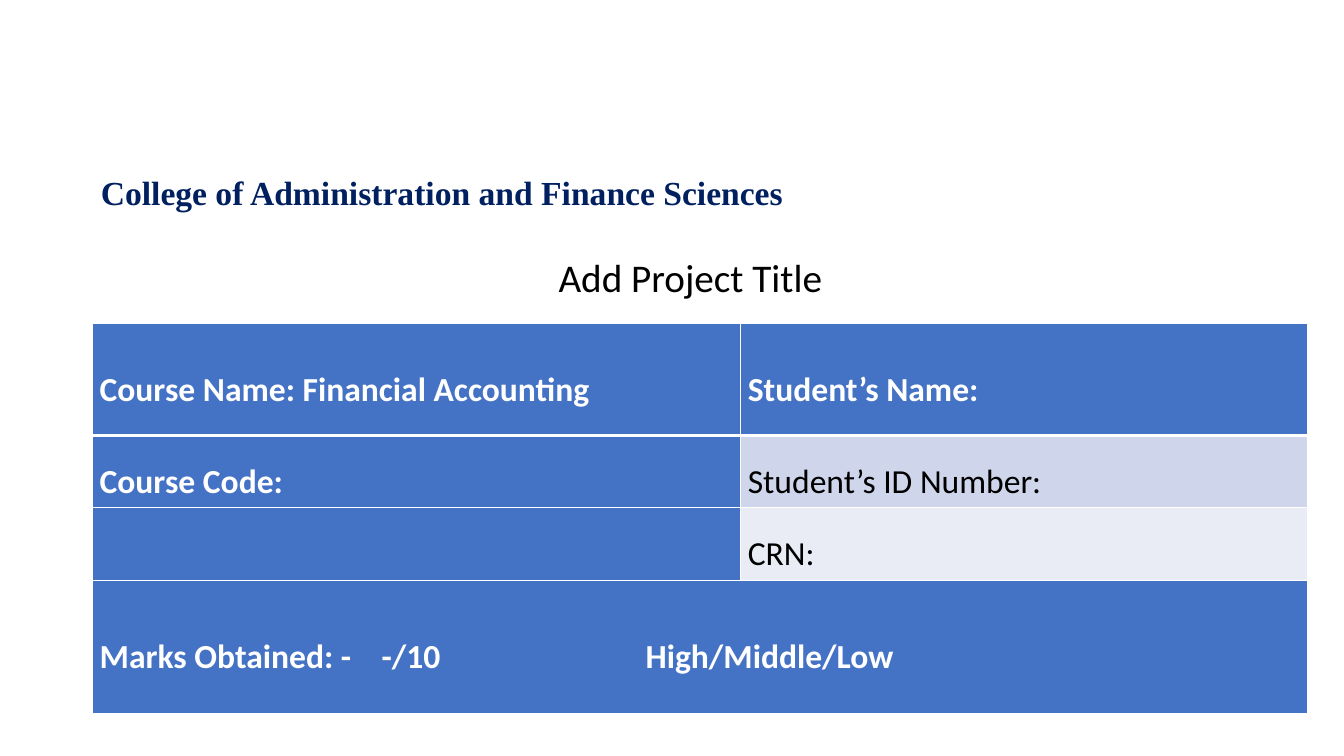
from lxml.etree import SubElement
from pptx import Presentation
from pptx.dml.color import RGBColor
from pptx.enum.text import MSO_ANCHOR, PP_ALIGN
from pptx.oxml import parse_xml
from pptx.oxml.ns import nsdecls, qn
from pptx.util import Pt

BLACK = RGBColor(0x00, 0x00, 0x00)
WHITE = RGBColor(0xFF, 0xFF, 0xFF)
NAVY = RGBColor(0x00, 0x20, 0x60)
BLUE = RGBColor(0x44, 0x72, 0xC4)
PALE_BLUE = RGBColor(0xCF, 0xD5, 0xEA)
LIGHT_GREY = RGBColor(0xE9, 0xEB, 0xF5)

HEADING = (WHITE, BLUE, True)
DETAIL = (BLACK, PALE_BLUE, False)
DETAIL_ALTERNATE = (BLACK, LIGHT_GREY, False)

COLUMN_WIDTHS = (463, 404.6)
ROW_HEIGHTS = (79.9, 51.8, 51.8, 95)
MARK_STOPS = (201.4, 390)
ROWS = (
    (("Course Name: Financial Accounting", HEADING), ("Student’s Name:", HEADING)),
    (("Course Code:", HEADING), ("Student’s ID Number:", DETAIL)),
    (("", HEADING), ("CRN:", DETAIL_ALTERNATE)),
    (("Marks Obtained: -\t-/10\tHigh/Middle/Low", HEADING), ("", HEADING)),
)


class CoverSlide:
    def __init__(self, deck):
        self.slide = deck.slides.add_slide(deck.slide_layouts[6])
        self.font = "Calibri"
        self.size = 24

    def fill_paragraph(self, para, text, font_format, para_format):
        for name, value in para_format.items():
            setattr(para, name, value)
        span = para.add_run()
        span.text = text
        span.font.color.rgb = font_format["color"]
        values = {
            "name": font_format.get("name", self.font),
            "size": Pt(font_format.get("size", self.size)),
            "bold": font_format.get("bold", False),
        }
        for name, value in values.items():
            setattr(span.font, name, value)

    def text(self, text, left, top, width, height, font_format, para_format):
        box = self.slide.shapes.add_textbox(Pt(left), Pt(top), Pt(width), Pt(height))
        box.text_frame.word_wrap = True
        self.fill_paragraph(box.text_frame.paragraphs[0], text, font_format, para_format)

    def tab_stops(self, para, positions):
        stops = SubElement(para._p.get_or_add_pPr(), qn("a:tabLst"))
        for position in positions:
            SubElement(stops, qn("a:tab"), pos=str(Pt(position)), algn="l")

    def borders(self, cell, top, bottom):
        properties = cell._tc.get_or_add_tcPr()
        widths = {"lnL": 1, "lnR": 1, "lnT": top, "lnB": bottom}
        for index, (edge, width) in enumerate(widths.items()):
            line = parse_xml(
                f'<a:{edge} {nsdecls("a")} w="{Pt(width)}"><a:solidFill>'
                f'<a:srgbClr val="{WHITE}"/></a:solidFill></a:{edge}>'
            )
            properties.insert(index, line)

    def cell(self, cell, text, style):
        color, fill, bold = style
        margins = {
            "margin_left": Pt(5),
            "margin_right": Pt(5),
            "margin_top": 0,
            "margin_bottom": 0,
            "vertical_anchor": MSO_ANCHOR.MIDDLE,
        }
        for name, value in margins.items():
            setattr(cell, name, value)
        cell.fill.solid()
        cell.fill.fore_color.rgb = fill
        if text:
            para = cell.text_frame.paragraphs[0]
            self.fill_paragraph(para, text, {"color": color, "bold": bold}, {"line_spacing": 1.5})
            if "\t" in text:
                self.tab_stops(para, MARK_STOPS)

    def table(self, rows, left, top, widths, heights):
        frame = self.slide.shapes.add_table(
            len(rows), len(widths), Pt(left), Pt(top), Pt(sum(widths)), Pt(sum(heights))
        )
        table = frame.table
        for column, width in zip(table.columns, widths):
            column.width = Pt(width)
        for row, height in zip(table.rows, heights):
            row.height = Pt(height)
        for row_index, entries in enumerate(rows):
            for column_index, (text, style) in enumerate(entries):
                cell = table.cell(row_index, column_index)
                self.cell(cell, text, style)
                top_width = 3 if row_index == 1 else 1
                bottom_width = 3 if row_index == 0 else 1
                self.borders(cell, top_width, bottom_width)
        last = len(rows) - 1
        table.cell(last, 0).merge(table.cell(last, len(widths) - 1))


def main():
    deck = Presentation()
    deck.slide_width = Pt(960)
    deck.slide_height = Pt(540)
    cover = CoverSlide(deck)
    cover.text(
        "Add Project Title", 100, 181.4, 786.2, 203,
        {"color": BLACK, "size": 28},
        {"alignment": PP_ALIGN.CENTER, "line_spacing": 0.9, "space_before": Pt(10)},
    )
    cover.text(
        "College of Administration and Finance Sciences", 8.6, 135.4, 614.2, 49.7,
        {"color": NAVY, "name": "Times New Roman", "bold": True},
        {"alignment": PP_ALIGN.CENTER, "line_spacing": Pt(12.9)},
    )
    cover.table(ROWS, 66.2, 231.1, COLUMN_WIDTHS, ROW_HEIGHTS)
    deck.save("out.pptx")


if __name__ == "__main__":
    main()
